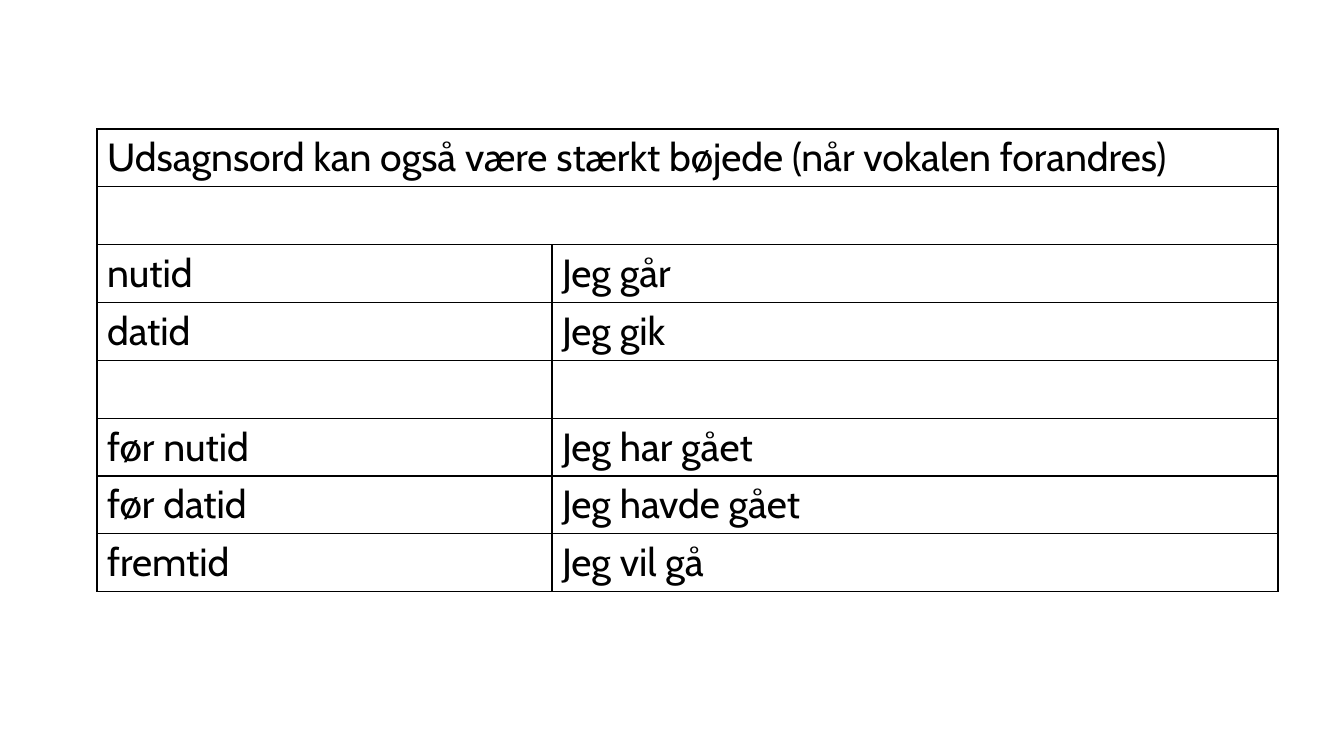
from dataclasses import dataclass

from lxml import etree
from pptx import Presentation
from pptx.dml.color import RGBColor
from pptx.oxml.ns import qn
from pptx.util import Pt

PX = 914400 / 100.8
BLANK_LAYOUT = 6


@dataclass(frozen=True)
class Theme:
    ink: str = "000000"
    font: str = "Cabin"
    text_size: int = 28
    border_width: int = 1


THEME = Theme()

# A row with a single entry spans both columns
VERB_ROWS = [
    ["Udsagnsord kan også være stærkt bøjede (når vokalen forandres)"],
    [""],
    ["nutid", "Jeg går"],
    ["datid", "Jeg gik"],
    ["", ""],
    ["før nutid", "Jeg har gået"],
    ["før datid", "Jeg havde gået"],
    ["fremtid", "Jeg vil gå"],
]
TENSE_WIDTH = 455


def px(length):
    return round(length * PX)


def add_borders(cell, sides):
    properties = cell._tc.get_or_add_tcPr()
    for side in sides:
        line = etree.SubElement(properties, qn(f"a:ln{side}"), w=str(Pt(THEME.border_width)))
        fill = etree.SubElement(line, qn("a:solidFill"))
        etree.SubElement(fill, qn("a:srgbClr"), val=THEME.ink)


def write_text(cell, text):
    para = cell.text_frame.paragraphs[0]
    if not text:
        etree.SubElement(para._p, qn("a:endParaRPr"), sz=str(THEME.text_size * 100))
        return
    span = para.add_run()
    span.text = text
    span.font.name = THEME.font
    span.font.size = Pt(THEME.text_size)
    span.font.color.rgb = RGBColor.from_string(THEME.ink)


def add_verb_table(page, left, top, width, height):
    frame = page.shapes.add_table(len(VERB_ROWS), 2, px(left), px(top), px(width), px(height))
    table = frame.table
    table.first_row = table.horz_banding = False

    # Column widths and equal row heights
    table.columns[0].width = px(TENSE_WIDTH)
    table.columns[1].width = px(width - TENSE_WIDTH)
    for row in table.rows:
        row.height = px(height / len(VERB_ROWS))

    # Text, merged rows and borders
    for row_index, entries in enumerate(VERB_ROWS):
        if len(entries) == 1:
            table.cell(row_index, 0).merge(table.cell(row_index, 1))
        for column_index, text in enumerate(entries):
            write_text(table.cell(row_index, column_index), text)
        for cell in table.rows[row_index].cells:
            add_borders(cell, "RTB" if cell.is_spanned else "LRTB")
            cell.fill.background()


def main():
    deck = Presentation()
    deck.slide_width, deck.slide_height = px(1344), px(756)
    page = deck.slides.add_slide(deck.slide_layouts[BLANK_LAYOUT])
    add_verb_table(page, left=97, top=129, width=1181, height=462)
    deck.save("out.pptx")


if __name__ == "__main__":
    main()
